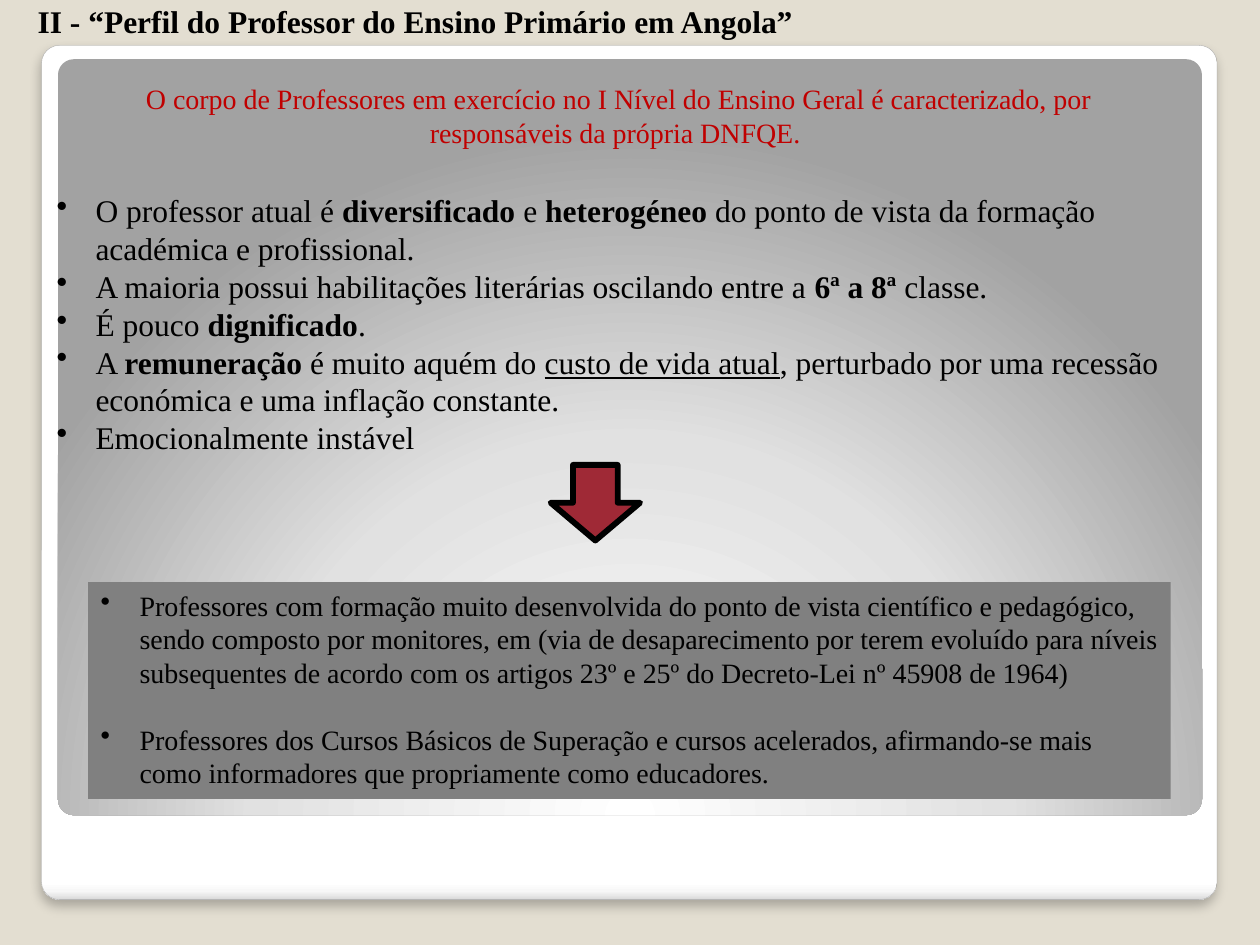
import dataclasses

import pptx
import pptx.dml.color
import pptx.enum.shapes
import pptx.enum.text
import pptx.oxml
import pptx.oxml.ns
import pptx.util

SHAPE = pptx.enum.shapes.MSO_SHAPE
ALIGN = pptx.enum.text.PP_ALIGN
AUTO = pptx.enum.text.MSO_AUTO_SIZE
COLS, ROWS = 100, 75
BOLD = {"bold": True}
UNDERLINE = {"underline": True}


@dataclasses.dataclass(frozen=True)
class Theme:
    font: str = "Times New Roman"
    background: str = "E3DED1"
    ink: str = "000000"
    accent: str = "C00000"
    arrow: str = "9F2936"
    band: str = "808080"
    edge: str = "A4A4A4"
    card: tuple = ((0, "FFFFFF"), (98, "FFFFFF"), (99, "F7F7F7"), (100, "DADADA"))
    panel: tuple = ((0, "FFFFFF"), (55, "E1E1E1"), (100, "A2A2A2"))
    large: int = 18
    small: int = 16
    indent: float = 0.31


def rgb(color):
    return pptx.dml.color.RGBColor.from_string(color)


def add_xml(parent, xml):
    tag, rest = xml[1:].split(" ", 1)
    parent.append(pptx.oxml.parse_xml(f"<{tag} {pptx.oxml.ns.nsdecls('a')} {rest}"))


class Deck:
    def __init__(self, theme):
        self.theme = theme
        self.prs = pptx.Presentation()
        self.prs.slide_width = pptx.util.Inches(10)
        self.prs.slide_height = pptx.util.Inches(7.5)
        self.s = self.prs.slides.add_slide(self.prs.slide_layouts[6])
        fill = self.s.background.fill
        fill.solid()
        fill.fore_color.rgb = rgb(theme.background)

    def place(self, left, top, width, height):
        x, y = self.prs.slide_width / COLS, self.prs.slide_height / ROWS
        return [round(n) for n in (left * x, top * y, width * x, height * y)]

    def shape(self, kind, at, fill=None, line=None, weight=0, corner=None):
        sp = self.s.shapes.add_shape(kind, *self.place(*at))
        sp.shadow.inherit = False
        if corner is not None:
            sp.adjustments[0] = corner
        if fill:
            sp.fill.solid()
            sp.fill.fore_color.rgb = rgb(fill)
        if line:
            sp.line.color.rgb = rgb(line)
            sp.line.width = pptx.util.Pt(weight)
        else:
            sp.line.fill.background()
        return sp

    def gradient(self, sp, stops, direction):
        sp.fill.gradient()
        grad = sp._element.spPr.find(pptx.oxml.ns.qn("a:gradFill"))
        for child in list(grad):
            grad.remove(child)
        colors = "".join(
            f'<a:gs pos="{pos * 1000}"><a:srgbClr val="{color}"/></a:gs>'
            for pos, color in stops
        )
        add_xml(grad, f"<a:gsLst >{colors}</a:gsLst>")
        add_xml(grad, direction)

    def drop_shadow(self, sp, blur, distance, alpha):
        effects = sp._element.spPr.find(pptx.oxml.ns.qn("a:effectLst"))
        add_xml(
            effects,
            f'<a:outerShdw blurRad="{pptx.util.Pt(blur)}" dist="{pptx.util.Pt(distance)}" '
            f'dir="5400000" rotWithShape="0"><a:srgbClr val="{self.theme.ink}">'
            f'<a:alpha val="{alpha * 1000}"/></a:srgbClr></a:outerShdw>',
        )

    def textbox(self, at, paragraphs, size, **style):
        sp = self.s.shapes.add_textbox(*self.place(*at))
        self.fill_text(sp, paragraphs, size, **style)
        sp.text_frame.auto_size = AUTO.SHAPE_TO_FIT_TEXT

    def fill_text(self, sp, paragraphs, size, color=None, bold=False,
                  align=ALIGN.LEFT, bullet=False, gap=0):
        tf = sp.text_frame
        tf.word_wrap = True
        tf.vertical_anchor = pptx.enum.text.MSO_ANCHOR.TOP
        base = {"name": self.theme.font, "size": pptx.util.Pt(size), "bold": bold}
        for i, runs in enumerate(paragraphs):
            p = tf.add_paragraph() if i else tf.paragraphs[0]
            p.alignment = align
            p.space_before = pptx.util.Pt(gap if i else 0)
            if bullet:
                pPr = p._p.get_or_add_pPr()
                indent = pptx.util.Inches(self.theme.indent)
                pPr.set("marL", str(indent))
                pPr.set("indent", str(-indent))
                add_xml(pPr, '<a:buChar char="•"/>')
            for text, format_values in runs:
                r = p.add_run()
                r.text = text
                r.font.color.rgb = rgb(color or self.theme.ink)
                for name, value in {**base, **format_values}.items():
                    setattr(r.font, name, value)


def main():
    theme = Theme()
    deck = Deck(theme)

    card = deck.shape(SHAPE.ROUNDED_RECTANGLE, (3.3, 3.6, 93.3, 67.8),
                      line=theme.edge, weight=0.16, corner=0.021)
    deck.gradient(card, theme.card, '<a:lin ang="5400000" scaled="0"/>')
    deck.drop_shadow(card, blur=6, distance=4, alpha=25)
    panel = deck.shape(SHAPE.ROUNDED_RECTANGLE, (4.6, 4.7, 90.8, 60), corner=0.021)
    deck.gradient(
        panel, theme.panel,
        '<a:path path="circle"><a:fillToRect l="50000" t="175000" '
        'r="50000" b="-75000"/></a:path>',
    )

    deck.textbox(
        (2, -0.3, 94.5, 4),
        [[("II - “Perfil do Professor do Ensino Primário em Angola”", {})]],
        theme.large, bold=True,
    )
    deck.textbox(
        (6.2, 6, 85.8, 6.4),
        [[("O corpo de Professores em exercício no I Nível do Ensino Geral é "
           "caracterizado, por responsáveis da própria DNFQE. ", {})]],
        theme.small, color=theme.accent, align=ALIGN.CENTER,
    )
    traits = [
        [("O professor atual é ", {}), ("diversificado", BOLD), (" e ", {}),
         ("heterogéneo ", BOLD),
         ("do ponto de vista da formação académica e profissional.", {})],
        [("A maioria possui habilitações literárias oscilando entre a ", {}),
         ("6ª a 8ª ", BOLD), ("classe.", {})],
        [("É pouco ", {}), ("dignificado", BOLD), (".", {})],
        [("A ", {}), ("remuneração ", BOLD), ("é muito aquém do ", {}),
         ("custo de vida atual", UNDERLINE),
         (", perturbado por uma recessão económica e uma inflação constante.", {})],
        [("Emocionalmente instável", {})],
    ]
    deck.textbox((3.5, 14.7, 92.9, 22.2), traits, theme.large, bullet=True)

    deck.shape(SHAPE.DOWN_ARROW, (43.7, 36.9, 7.1, 6), theme.arrow,
               line=theme.ink, weight=3.35)

    groups = [
        [("Professores com formação muito desenvolvida do ponto de vista científico e "
          "pedagógico, sendo composto por monitores, em (via de desaparecimento por "
          "terem evoluído para níveis subsequentes de acordo com os artigos 23º e 25º "
          "do Decreto-Lei nº 45908 de 1964)", {})],
        [("Professores dos Cursos Básicos de Superação e cursos acelerados, "
          "afirmando-se mais como informadores que propriamente como educadores.", {})],
    ]
    band = deck.shape(SHAPE.RECTANGLE, (7, 46.2, 85.9, 17.2), theme.band)
    deck.fill_text(band, groups, theme.small, bullet=True, gap=19)

    deck.prs.save("out.pptx")


if __name__ == "__main__":
    main()
